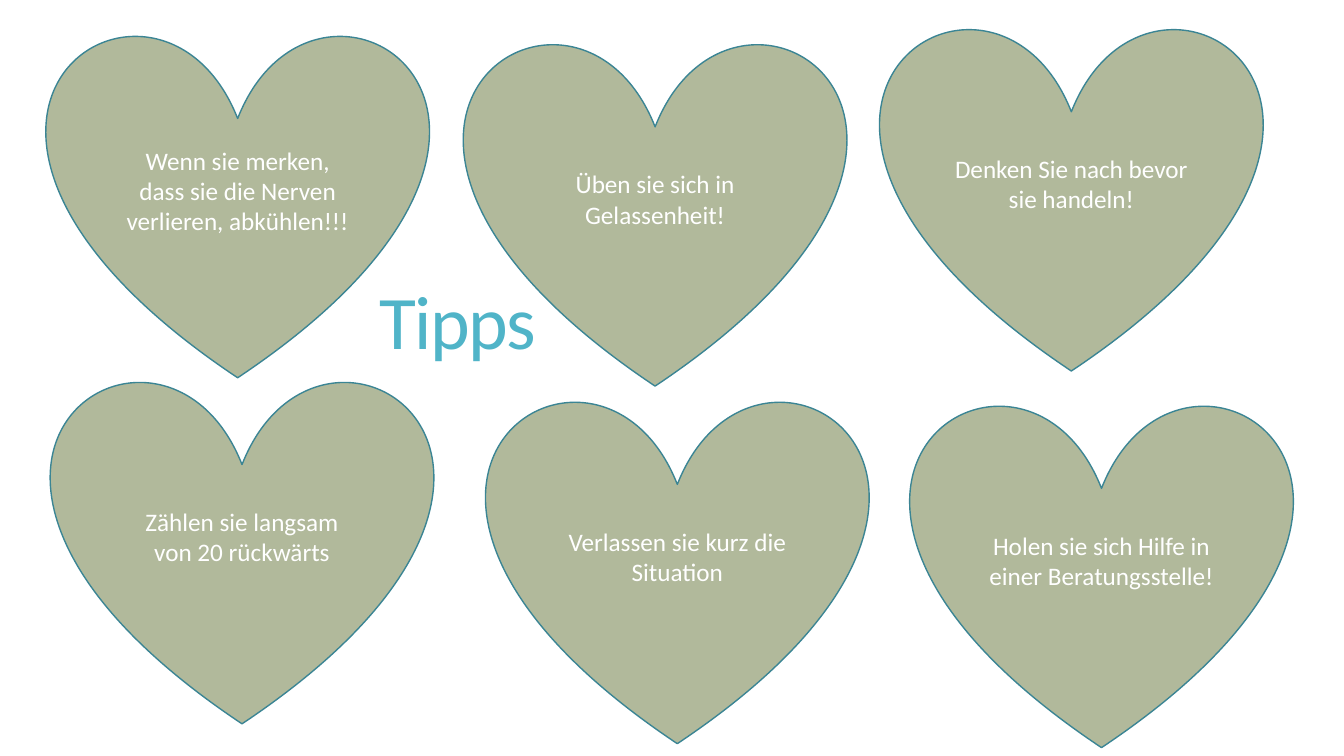
from pptx import Presentation
from pptx.dml.color import RGBColor
from pptx.enum.shapes import MSO_SHAPE
from pptx.enum.text import MSO_ANCHOR, PP_ALIGN
from pptx.util import Cm, Pt

# Content: text, left and top of each heart in cm, back to front
HEARTS = [
    ("Zählen sie langsam von 20 rückwärts", 1.3, 9.53),
    ("Holen sie sich Hilfe in einer Beratungsstelle!", 22.96, 10.13),
    ("Denken Sie nach bevor sie handeln!", 22.2, 0.64),
    ("Üben sie sich in Gelassenheit!", 11.71, 1.02),
    ("Wenn sie merken, dass sie die Nerven verlieren, abkühlen!!!", 1.19, 0.81),
    ("Verlassen sie kurz die Situation", 12.27, 10.03),
]
TITLE = "Tipps"
TITLE_BOX = (9.32, 5.92, 14.71, 4.6)
HEART_SIZE = (9.6, 8.71)

# Colours and formats
SAGE = RGBColor(0xB1, 0xB9, 0x9B)
TEAL = RGBColor(0x3B, 0x85, 0x94)
AQUA = RGBColor(0x50, 0xB4, 0xC8)
WHITE = RGBColor(0xFF, 0xFF, 0xFF)
TIP_FONT = {"name": "Calibri", "size": Pt(18)}
TITLE_FONT = {"name": "Calibri", "size": Pt(54)}
TIP_PARA = {"alignment": PP_ALIGN.CENTER}
TITLE_PARA = {"alignment": PP_ALIGN.LEFT, "line_spacing": 0.85}
FRAME = {"word_wrap": True, "vertical_anchor": MSO_ANCHOR.MIDDLE}


def apply(target, values):
    for key, value in values.items():
        setattr(target, key, value)


def write(shape, text, font, para, color):
    frame = shape.text_frame
    apply(frame, FRAME)
    line = frame.paragraphs[0]
    apply(line, para)
    run = line.add_run()
    run.text = text
    apply(run.font, font)
    run.font.color.rgb = color
    return run


def add_heart(slide, text, left, top):
    box = [Cm(n) for n in (left, top, *HEART_SIZE)]
    heart = slide.shapes.add_shape(MSO_SHAPE.HEART, *box)
    heart.shadow.inherit = False
    heart.fill.solid()
    heart.fill.fore_color.rgb = SAGE
    heart.line.color.rgb = TEAL
    heart.line.width = Pt(1)
    write(heart, text, TIP_FONT, TIP_PARA, WHITE)


def main():
    deck = Presentation()
    deck.slide_width, deck.slide_height = Cm(33.87), Cm(19.05)
    slide = deck.slides.add_slide(deck.slide_layouts[6])

    # Hearts with tips
    for text, left, top in HEARTS:
        add_heart(slide, text, left, top)

    # Title with tightened letters
    title = slide.shapes.add_textbox(*[Cm(n) for n in TITLE_BOX])
    run = write(title, TITLE, TITLE_FONT, TITLE_PARA, AQUA)
    run._r.get_or_add_rPr().set("spc", "-120")

    deck.save("out.pptx")


if __name__ == "__main__":
    main()
